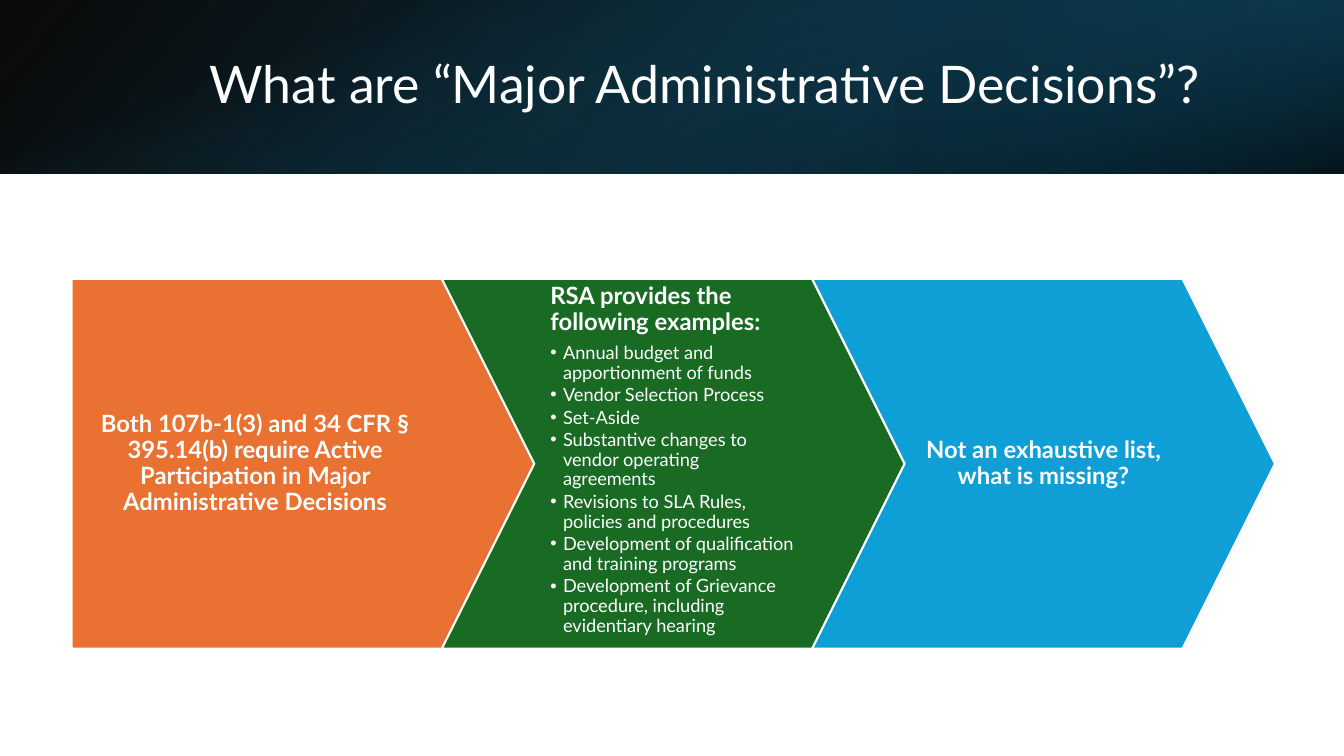
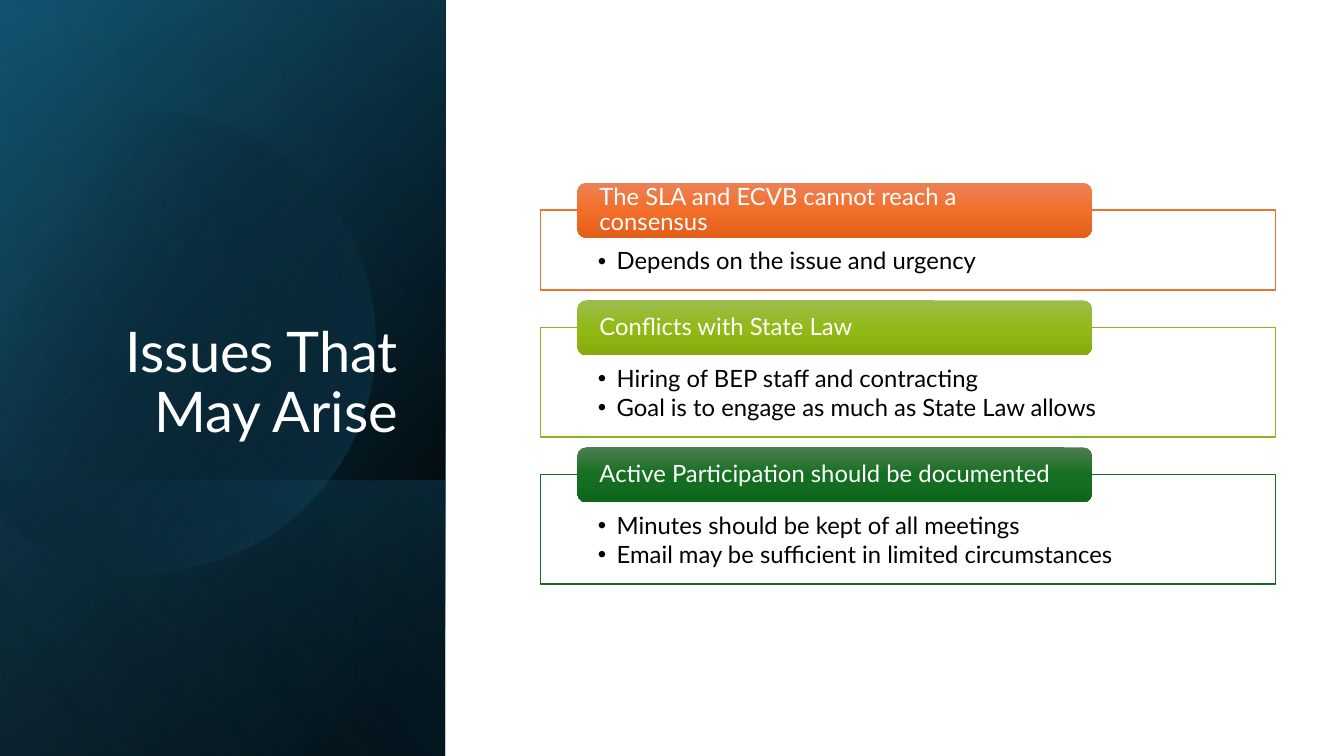
import math

from pptx import Presentation
from pptx.dml.color import RGBColor
from pptx.enum import shapes, text
from pptx.oxml import parse_xml
from pptx.oxml import ns
from pptx.util import Pt

COLORS = {
    "white": "FFFFFF", "black": "000000", "teal": "156082", "navy": "104862",
    "deep": "0B3041", "sky": "46B1E1", "orange": "E97132", "lime": "8EB21E",
    "green": "196B24", "blue": "0F9ED5",
}
FONT = "Lato"
SHAPE = shapes.MSO_SHAPE
ALIGN = text.PP_ALIGN
ANCHOR = text.MSO_ANCHOR


def fill_gradient(shape, stops, angle):
    """Fill without outline; stops are (position %, hex color, opacity %)."""
    shape.shadow.inherit = False
    shape.line.fill.background()
    shape.fill.background()
    stop_xml = "".join(
        f'<a:gs pos="{position * 1000}"><a:srgbClr val="{color}">'
        f'<a:alpha val="{opacity * 1000}"/></a:srgbClr></a:gs>'
        for position, color, opacity in stops)
    properties = shape._element.spPr
    properties.replace(properties.find(ns.qn("a:noFill")), parse_xml(
        f'<a:gradFill {ns.nsdecls("a")} rotWithShape="1"><a:gsLst>{stop_xml}</a:gsLst>'
        f'<a:lin ang="{angle * 60000}" scaled="0"/></a:gradFill>'))


def write_lines(shape, lines, anchor, margins, align=ALIGN.LEFT, color="white"):
    """Write lines given as (text, size, bold, space after, bullet indent)."""
    frame = shape.text_frame
    frame.word_wrap = True
    frame.auto_size = text.MSO_AUTO_SIZE.NONE
    frame.vertical_anchor = anchor
    (frame.margin_left, frame.margin_top,
     frame.margin_right, frame.margin_bottom) = [Pt(margin) for margin in margins]
    frame.text = "\n".join(line[0] for line in lines)
    for paragraph, (_, size, bold, after, indent) in zip(frame.paragraphs, lines):
        paragraph.alignment = align
        paragraph.line_spacing = 0.9
        paragraph.space_before = Pt(0)
        paragraph.space_after = Pt(after)
        font = paragraph.runs[0].font
        font.name, font.size, font.bold = FONT, Pt(size), bold
        font.color.rgb = RGBColor.from_string(COLORS[color])
        if indent:
            properties = paragraph._p.get_or_add_pPr()
            properties.set("marL", str(Pt(indent)))
            properties.set("indent", str(-Pt(indent)))
            for bullet_xml in ('buFont {} typeface="Arial"', 'buChar {} char="•"'):
                properties.append(parse_xml(f'<a:{bullet_xml.format(ns.nsdecls("a"))}/>'))


presentation = Presentation()
presentation.slide_width, presentation.slide_height = Pt(960), Pt(540)
title_only = presentation.slide_layouts[5]
decisions = presentation.slides.add_slide(title_only)
issues = presentation.slides.add_slide(title_only)

# Layered gradient panels: slide, visible box, rotation, flipped, stops, angle
BAND, SIDE = (0, 0, 960, 124), (0, 0, 318, 540)
black, teal, navy = COLORS["black"], COLORS["teal"], COLORS["navy"]
panels = [
    (decisions, BAND, 0, True, [(0, black, 96), (100, navy, 100)], 140),
    (decisions, (640, 0, 320, 124), 180, True,
     [(19, COLORS["deep"], 68), (100, teal, 79)], 320),
    (decisions, BAND, 90, False, [(23, teal, 0), (99, black, 74)], 340),
    (issues, SIDE, 90, True, [(8, black, 100), (100, navy, 100)], 50),
    (issues, SIDE, 90, True, [(0, black, 0), (99, teal, 46)], 30),
    (issues, (0, 343, 318, 197), 90, True, [(2, teal, 29), (100, black, 30)], 130),
    (issues, SIDE, 90, True, [(0, black, 0), (99, COLORS["sky"], 11)], 120),
]
for slide, (left, top, width, height), rotation, flipped, stops, angle in panels:
    if rotation == 90:
        left, top = left + (width - height) / 2, top + (height - width) / 2
        width, height = height, width
    panel = slide.shapes.add_shape(SHAPE.RECTANGLE, Pt(left), Pt(top), Pt(width), Pt(height))
    panel.rotation = rotation
    if flipped:
        panel._element.spPr.xfrm.set("flipH", "1")
    fill_gradient(panel, stops, angle)

# Faint disc, cut off along the slide's left edge
center_x, center_y, radius = 104, 243.5, 164.5
disc = issues.shapes.add_shape(SHAPE.CHORD, Pt(center_x - radius), Pt(center_y - radius),
                               Pt(2 * radius), Pt(2 * radius))
cut_angle = math.degrees(math.acos(-center_x / radius))
disc.adjustments[0] = (360 - cut_angle) * 0.6
disc.adjustments[1] = cut_angle * 0.6
fill_gradient(disc, [(29, black, 0), (100, teal, 43)], 30)

# Titles, in front of the panels
titles = [
    (decisions, "What are “Major Administrative Decisions”?", 37,
     (108, 27.4, 790.6, 69.1), ANCHOR.MIDDLE, ALIGN.CENTER),
    (issues, "Issues That May Arise", 40,
     (46, 132.5, 245.5, 188.8), ANCHOR.BOTTOM, ALIGN.RIGHT),
]
for slide, wording, size, box, anchor, align in titles:
    title = slide.shapes.title
    title.left, title.top, title.width, title.height = [Pt(length) for length in box]
    write_lines(title, [(wording, size, False, 0, 0)], anchor, (7.2, 3.6, 7.2, 3.6), align)
    slide.shapes._spTree.append(title._element)

# Process arrows
examples = [
    "Annual budget and apportionment of funds",
    "Vendor Selection Process",
    "Set-Aside",
    "Substantive changes to vendor operating agreements",
    "Revisions to SLA Rules, policies and procedures",
    "Development of qualification and training programs",
    "Development of Grievance procedure, including evidentiary hearing",
]
arrows = [
    (SHAPE.PENTAGON, "orange", ANCHOR.MIDDLE, ALIGN.CENTER, 46.8,
     "Both 107b-1(3) and 34 CFR § 395.14(b) require Active Participation "
     "in Major Administrative Decisions", []),
    (SHAPE.CHEVRON, "green", ANCHOR.TOP, ALIGN.LEFT, 11.5,
     "RSA provides the following examples:", examples),
    (SHAPE.CHEVRON, "blue", ANCHOR.MIDDLE, ALIGN.CENTER, 11.5,
     "Not an exhaustive list, what is missing?", []),
]
for index, (kind, color, anchor, align, right_margin, heading, bullets) in enumerate(arrows):
    arrow = decisions.shapes.add_shape(
        kind, Pt(51.1 + index * 264.5), Pt(199.2), Pt(330.6), Pt(264.2))
    arrow.adjustments[0] = 0.25
    arrow.shadow.inherit = False
    arrow.fill.solid()
    arrow.fill.fore_color.rgb = RGBColor.from_string(COLORS[color])
    arrow.line.color.rgb = RGBColor.from_string(COLORS["white"])
    arrow.line.width = Pt(1.5)
    lines = [(heading, 17, True, 6, 0)] + [(bullet, 13, False, 2, 9) for bullet in bullets]
    write_lines(arrow, lines, anchor, (11.5, 3.6, right_margin, 3.6), align)

# Issue cards, each with a tab over its top edge
cards = [
    ("orange", ("ED8257", "F26E29", "E25F1A"),
     "The SLA and ECVB cannot reach a consensus",
     ["Depends on the issue and urgency"]),
    ("lime", ("9CBD4E", "92B916", "85AB0D"),
     "Conflicts with State Law",
     ["Hiring of BEP staff and contracting",
      "Goal is to engage as much as State Law allows"]),
    ("green", ("4D7E50", "156F21", "0F661B"),
     "Active Participation should be documented",
     ["Minutes should be kept of all meetings",
      "Email may be sufficient in limited circumstances"]),
]
top = 150.1
for color, tab_colors, heading, bullets in cards:
    height = 36 + 21 * len(bullets)
    card = issues.shapes.add_shape(SHAPE.RECTANGLE, Pt(386), Pt(top), Pt(525), Pt(height))
    card.shadow.inherit = False
    card.fill.solid()
    card.fill.fore_color.rgb = RGBColor.from_string(COLORS["white"])
    card.line.color.rgb = RGBColor.from_string(COLORS[color])
    card.line.width = Pt(1)
    write_lines(card, [(bullet, 17, False, 2.3, 13.5) for bullet in bullets],
                ANCHOR.TOP, (41, 28, 41, 9.4), color="black")

    tab = issues.shapes.add_shape(
        SHAPE.ROUNDED_RECTANGLE, Pt(412.4), Pt(top - 19.6), Pt(367.5), Pt(39.4))
    fill_gradient(tab, [(position, shade, 100)
                        for position, shade in zip((0, 50, 100), tab_colors)], 90)
    write_lines(tab, [(heading, 17, False, 6, 0)], ANCHOR.MIDDLE, (13.9, 0, 13.9, 0))
    top += height + 27

presentation.save("out.pptx")
